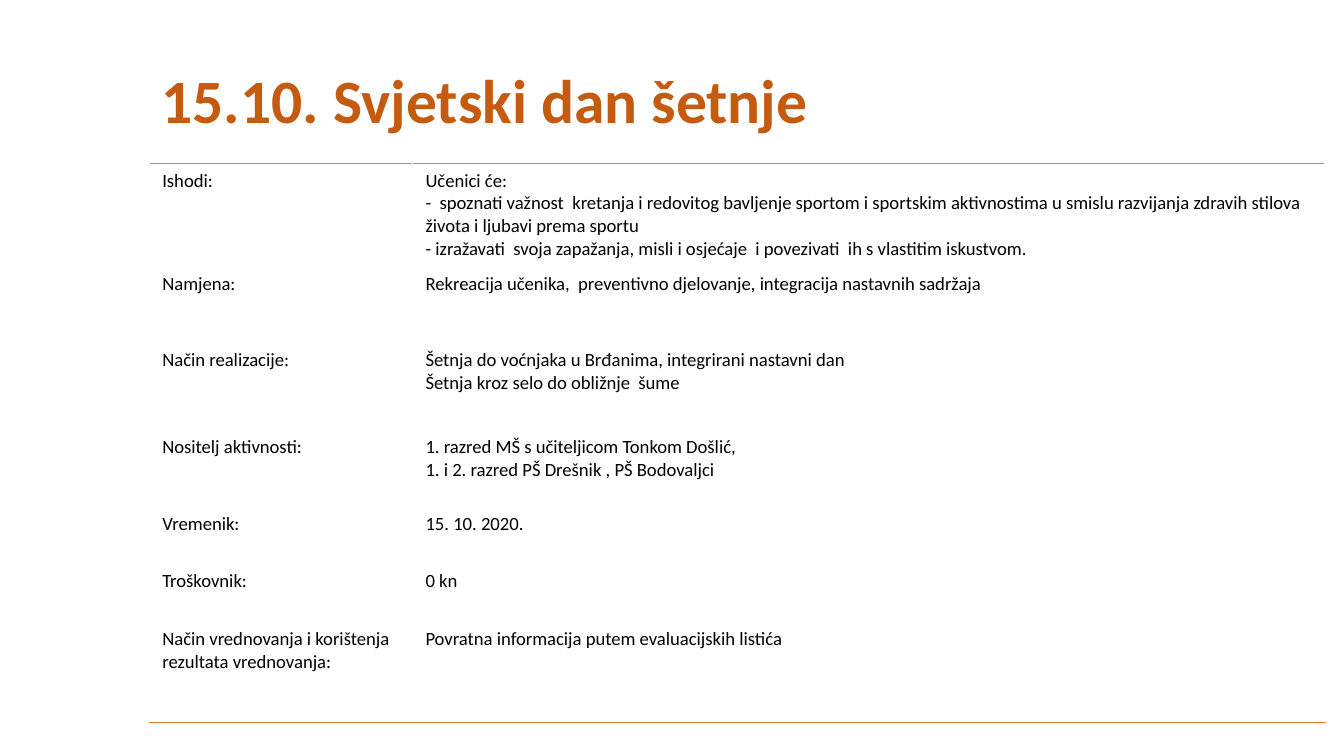
from lxml import etree
from pptx import Presentation
from pptx import util as u
from pptx.dml.color import RGBColor
from pptx.enum import text
from pptx.oxml import ns

TITLE_COLOR = RGBColor(0xC5, 0x5A, 0x11)
TOP_LINE = RGBColor(0x99, 0x99, 0x99)
BOTTOM_LINE = RGBColor(0xED, 0x7D, 0x31)
BLACK = RGBColor(0, 0, 0)
FONT = "Calibri"

COLUMN_WIDTHS = (141, 489)
# Row height, label, description
ROWS = [
    (55.4, "Ishodi:",
     "Učenici će:\n"
     "-  spoznati važnost  kretanja i redovitog bavljenje sportom i sportskim "
     "aktivnostima u smislu razvijanja zdravih stilova  života i ljubavi prema sportu\n"
     "- izražavati  svoja zapažanja, misli i osjećaje  i povezivati  ih s vlastitim iskustvom."),
    (41, "Namjena:",
     "Rekreacija učenika,  preventivno djelovanje, integracija nastavnih sadržaja"),
    (46.4, "Način realizacije:",
     "Šetnja do voćnjaka u Brđanima, integrirani nastavni dan\n"
     "Šetnja kroz selo do obližnje  šume"),
    (41, "Nositelj aktivnosti:",
     "1. razred MŠ s učiteljicom Tonkom Došlić,\n"
     "1. i 2. razred PŠ Drešnik , PŠ Bodovaljci"),
    (31, "Vremenik:", "15. 10. 2020."),
    (31, "Troškovnik:", "0 kn"),
    (53.6, "Način vrednovanja i korištenja rezultata vrednovanja:",
     "Povratna informacija putem evaluacijskih listića"),
]


def add_border(cell, tag, color, width):
    """Draw one cell edge; tag is a:lnT for the top or a:lnB for the bottom."""
    properties = cell._tc.get_or_add_tcPr()
    line = etree.Element(ns.qn(tag), w=str(u.Pt(width)))
    fill = etree.SubElement(line, ns.qn("a:solidFill"))
    etree.SubElement(fill, ns.qn("a:srgbClr"), val=str(color))
    properties.insert(0, line)


presentation = Presentation()
presentation.slide_width = u.Pt(720)
presentation.slide_height = u.Pt(405)
slide = presentation.slides.add_slide(presentation.slide_layouts[6])

# Activity table
table = slide.shapes.add_table(
    len(ROWS), len(COLUMN_WIDTHS), u.Pt(80), u.Pt(87.8),
    u.Pt(sum(COLUMN_WIDTHS)), u.Pt(sum(row[0] for row in ROWS))).table
table.first_row = False
table.horz_banding = False
for column, width in zip(table.columns, COLUMN_WIDTHS):
    column.width = u.Pt(width)

for row, (height, *contents) in zip(table.rows, ROWS):
    row.height = u.Pt(height)
    for cell, content in zip(row.cells, contents):
        cell.fill.background()
        cell.margin_left = cell.margin_right = u.Pt(7)
        cell.margin_top = cell.margin_bottom = u.Pt(3)
        cell.text_frame.text = content
        for paragraph in cell.text_frame.paragraphs:
            for run in paragraph.runs:
                run.font.name = FONT
                run.font.size = u.Pt(10)
                run.font.color.rgb = BLACK

for column_index in range(len(COLUMN_WIDTHS)):
    add_border(table.cell(0, column_index), "a:lnT", TOP_LINE, 0.5)
    add_border(table.cell(len(ROWS) - 1, column_index), "a:lnB", BOTTOM_LINE, 1)

# Title
title = slide.shapes.add_textbox(u.Pt(79.5), u.Pt(21.5), u.Pt(630), u.Pt(67.5))
frame = title.text_frame
frame.word_wrap = True
frame.vertical_anchor = text.MSO_ANCHOR.MIDDLE
frame.margin_left = frame.margin_right = u.Pt(7.2)
frame.margin_top = frame.margin_bottom = u.Pt(7.2)
frame.text = "15.10. Svjetski dan šetnje"
paragraph = frame.paragraphs[0]
paragraph.line_spacing = 0.9
font = paragraph.runs[0].font
font.name = FONT
font.size = u.Pt(33)
font.bold = True
font.color.rgb = TITLE_COLOR

presentation.save("out.pptx")
